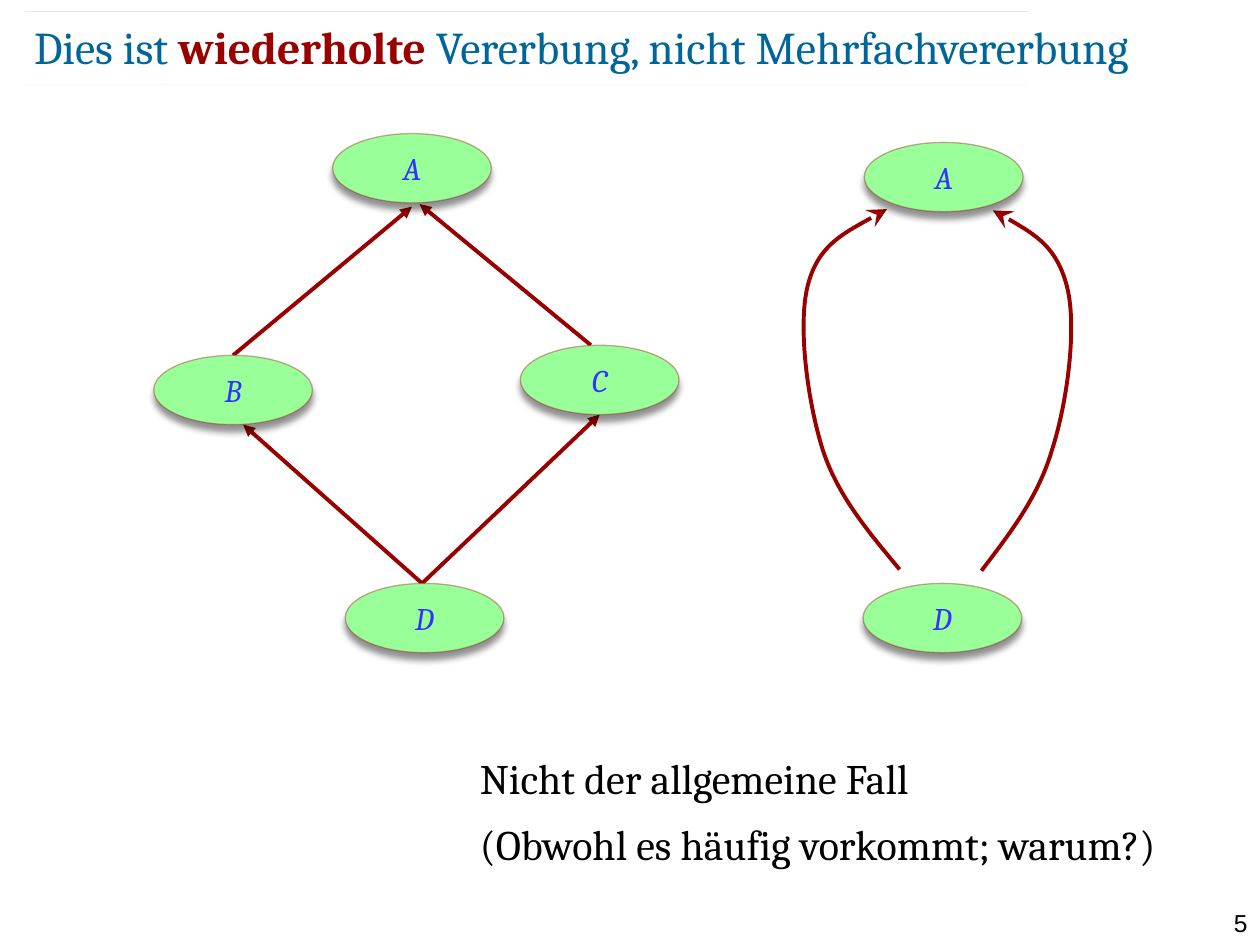
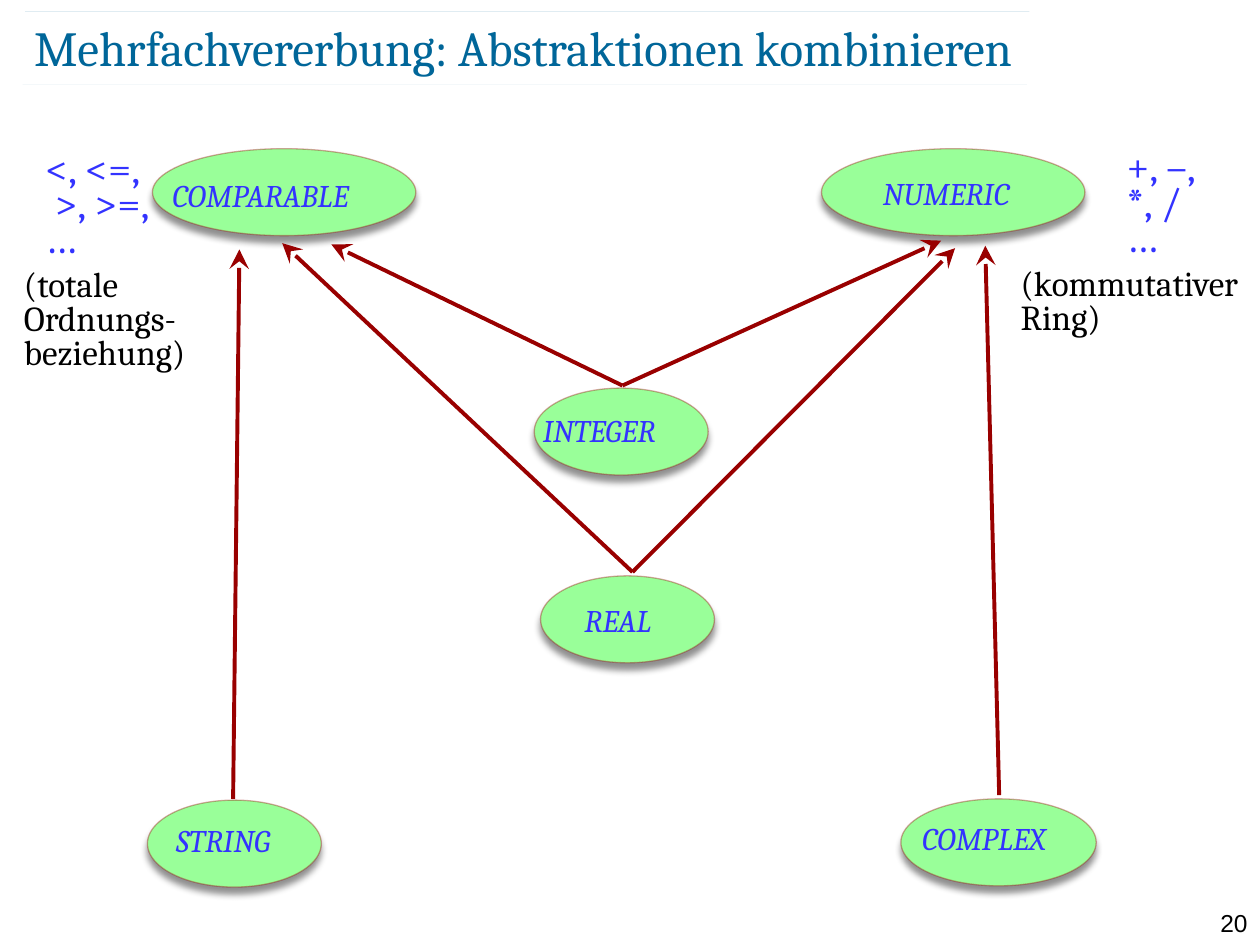
from lxml.etree import SubElement
from pptx import Presentation
from pptx.dml.color import RGBColor
from pptx.enum.shapes import MSO_CONNECTOR, MSO_SHAPE
from pptx.enum.text import MSO_ANCHOR, MSO_AUTO_SIZE, PP_ALIGN
from pptx.oxml.ns import qn
from pptx.util import Pt

PX = 9144  # EMU in one px, 100 px to the inch
TEAL, RED, BLUE, GREEN, BLACK = "006699", "990000", "3333FF", "99FF99", "000000"


def paint(fmt, color):
    fmt.rgb = RGBColor.from_string(color)


def fade(node, percent):
    """Make the colour inside an XML node partly transparent."""
    color = next(node.iter(qn("a:srgbClr")))
    SubElement(color, qn("a:alpha"), val=str(percent * 1000))


class Deck:
    """Holds the style and the slide being filled."""

    font = "Cambria"

    def __init__(self):
        self.prs = Presentation()
        self.prs.slide_width, self.prs.slide_height = 1000 * PX, 750 * PX

    def page(self, number, title, width, size):
        self.slide = self.prs.slides.add_slide(self.prs.slide_layouts[5])
        self.shapes = self.slide.shapes
        for x, y in ((18, 67), (20, 9)):
            rule = self.line((x, y), (x + 797, y), color=TEAL, weight=0.1)
            fade(rule.element.spPr, 35)
        self.text((945, 716, 55, 24), [(number, BLACK)], 14, font="Arial",
                  align=PP_ALIGN.RIGHT)
        head = self.shapes.title
        head.left, head.top, head.width, head.height = (
            n * PX for n in (27, 13, width, 48))
        self.fill(head.text_frame, title, size, inset=False, anchor=MSO_ANCHOR.MIDDLE)

    def fill(self, frame, runs, size, font=font, align=PP_ALIGN.LEFT, inset=True,
             anchor=MSO_ANCHOR.TOP, wrap=True, spacing=None, italic=False):
        """Write (text, colour, bold) runs into a frame; a newline breaks the line."""
        frame.word_wrap = wrap
        frame.auto_size = MSO_AUTO_SIZE.NONE
        frame.vertical_anchor = anchor
        if not inset:
            frame.margin_left = frame.margin_right = 0
            frame.margin_top = frame.margin_bottom = 0
        par = frame.paragraphs[0]
        par.alignment = align
        if spacing:
            par.line_spacing = spacing
        for words, color, *bold in runs:
            for i, part in enumerate(words.split("\n")):
                if i:
                    par.add_line_break()
                run = par.add_run()
                run.text = part
                run.font.name, run.font.size = font, Pt(size)
                run.font.bold, run.font.italic = bool(bold), italic
                paint(run.font.color, color)

    def text(self, area, runs, size, **style):
        box = self.shapes.add_textbox(*(n * PX for n in area))
        self.fill(box.text_frame, runs, size, **style)

    def oval(self, x, y, w, h, label=""):
        oval = self.shapes.add_shape(MSO_SHAPE.OVAL, x * PX, y * PX, w * PX, h * PX)
        oval.fill.solid()
        paint(oval.fill.fore_color, GREEN)
        self.stroke(oval, RED, 0.75)
        props = oval.element.spPr
        fade(props.find(qn("a:ln")), 34)
        cast = SubElement(props.find(qn("a:effectLst")), qn("a:outerShdw"),
                          blurRad=str(Pt(4)), dist=str(Pt(4)), dir="5400000",
                          algn="ctr", rotWithShape="0")
        SubElement(cast, qn("a:srgbClr"), val=BLACK)
        fade(cast, 43)
        if label:
            self.fill(oval.text_frame, [(label, BLUE)], 18, align=PP_ALIGN.CENTER,
                      anchor=MSO_ANCHOR.MIDDLE, wrap=False, italic=True)

    def stroke(self, shape, color, weight, head=None):
        """Set the outline, drop the theme shadow and add an arrowhead."""
        shape.line.fill.solid()
        paint(shape.line.color, color)
        shape.line.width = Pt(weight)
        props = shape.element.spPr
        SubElement(props, qn("a:effectLst"))
        if head:
            size = "lg" if head == "stealth" else "med"
            SubElement(props.find(qn("a:ln")), qn("a:tailEnd"),
                       type=head, w=size, len=size)

    def line(self, start, end, head=None, color=RED, weight=2.25):
        line = self.shapes.add_connector(
            MSO_CONNECTOR.STRAIGHT, *(n * PX for n in start + end))
        self.stroke(line, color, weight, head)
        return line

    def curve(self, start, *points):
        """Draw an arrow of cubic curves, three points to each."""
        pen = self.shapes.build_freeform(*start, scale=PX)
        pen.add_line_segments(points, close=False)
        arc = pen.convert_to_shape()
        arc.fill.background()
        track = next(arc.element.iter(qn("a:path")))
        steps = track.findall(qn("a:lnTo"))
        for i in range(0, len(steps), 3):
            bend = SubElement(track, qn("a:cubicBezTo"))
            for step in steps[i:i + 3]:
                bend.append(step[0])
                track.remove(step)
        self.stroke(arc, RED, 2.25, "stealth")


def repeat(deck):
    deck.page("5", [("Dies ist ", TEAL), ("wiederholte", RED, True),
                    (" Vererbung, nicht Mehrfachvererbung", TEAL)], 929, 26)
    deck.curve((714, 452), (690, 423), (665, 394), (653, 357), (641, 319),
               (633, 259), (641, 227), (649, 195), (677, 181), (704, 166))
    deck.curve((779, 453), (801, 424), (824, 395), (835, 357), (847, 320),
               (855, 260), (847, 228), (839, 196), (814, 181), (788, 167))
    for start, end in (((185, 282), (327, 164)), ((469, 274), (333, 162)),
                       ((334, 464), (476, 329)), ((335, 463), (193, 337))):
        deck.line(start, end, "triangle")
    for label, x, y in (("A", 264, 106), ("D", 274, 463), ("B", 122, 282),
                        ("C", 413, 274), ("A", 686, 113), ("D", 685, 463)):
        deck.oval(x, y, 126, 55, label)
    deck.text((371, 592, 458, 50), [("Nicht der allgemeine Fall", BLACK)], 24)
    deck.text((371, 645, 610, 50),
              [("(Obwohl es häufig vorkommt; warum?)", BLACK)], 24)


def combine(deck):
    deck.page("20", [("Mehrfachvererbung: Abstraktionen kombinieren", TEAL)], 869, 28)
    nodes = (  # name, oval left, top, width, label left, top, width
        ("COMPARABLE", 121, 118, 209, 127, 135, 205),
        ("REAL", 429, 457, 138, 454, 472, 95),
        ("INTEGER", 424, 308, 138, 421, 321, 149),
        ("COMPLEX", 715, 634, 155, 722, 645, 149),
        ("NUMERIC", 652, 118, 209, 691, 133, 157),
        ("STRING", 117, 635, 138, 130, 647, 152))
    for name, x, y, w, left, top, width in nodes:
        deck.oval(x, y, w, 69)
        deck.text((left, top, width, 40), [(name, BLUE)], 18, italic=True)
    for start, end in (((494, 306), (263, 194)), ((494, 306), (747, 191)),
                       ((502, 454), (758, 197)), ((502, 454), (224, 193)),
                       ((185, 634), (190, 198)), ((793, 631), (782, 195))):
        deck.line(start, end, "stealth")
    for area, signs in (((26, 118, 130, 96), "<, <=,\n >, >=, …"),
                        ((884, 117, 95, 96), "+, –, *, / …")):
        deck.text(area, [(signs, BLUE)], 24, spacing=0.7)
    for area, note in (((19, 215, 190, 81), "(totale Ordnungs-beziehung)"),
                       ((810, 214, 190, 54), "(kommutativer Ring)")):
        deck.text(area, [(note, BLACK)], 20, spacing=0.8, inset=False)


def main():
    deck = Deck()
    repeat(deck)
    combine(deck)
    deck.prs.save("out.pptx")


if __name__ == "__main__":
    main()
